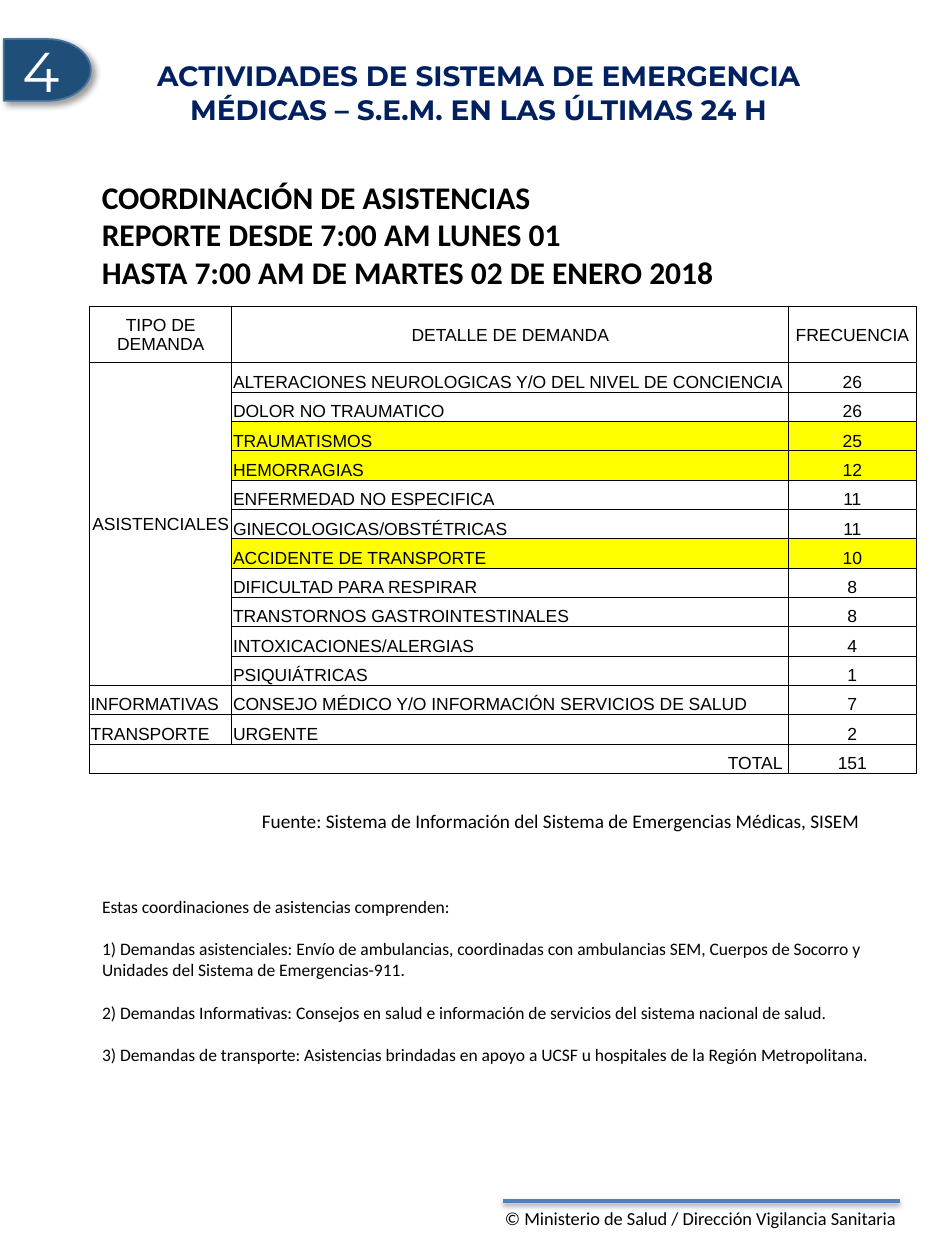
from dataclasses import dataclass, field
from typing import Any

import lxml.etree
import pptx
import pptx.dml.color
import pptx.enum.shapes
import pptx.enum.text
import pptx.oxml
import pptx.oxml.ns
import pptx.util

Inches = pptx.util.Inches
Pt = pptx.util.Pt
Align = pptx.enum.text.PP_ALIGN
Anchor = pptx.enum.text.MSO_ANCHOR
AutoSize = pptx.enum.text.MSO_AUTO_SIZE

BLACK, WHITE, NAVY, YELLOW = "000000", "FFFFFF", "002060", "FFFF00"
DRAWING = pptx.oxml.ns.nsdecls("a")
COLUMN_WIDTHS = (1.13, 4.42, 1.01)
HEADER_HEIGHT, ROW_HEIGHT = 0.45, 0.233
HEADINGS = ("TIPO DE DEMANDA", "DETALLE DE DEMANDA", "FRECUENCIA")


@dataclass
class TextStyle:
    size: float
    font: str = "Calibri"
    color: str = BLACK
    bold: bool = False
    paragraph: dict[str, Any] = field(default_factory=dict)


@dataclass
class TextBlock:
    left: float
    top: float
    width: float
    height: float
    lines: list[str]
    style: TextStyle
    wrap: bool = True


@dataclass
class Demand:
    kind: str
    detail: str
    frequency: int
    highlighted: bool = False


DEMANDS = [
    Demand("ASISTENCIALES", "ALTERACIONES NEUROLOGICAS Y/O DEL NIVEL DE CONCIENCIA", 26),
    Demand("", "DOLOR NO TRAUMATICO", 26),
    Demand("", "TRAUMATISMOS", 25, True),
    Demand("", "HEMORRAGIAS", 12, True),
    Demand("", "ENFERMEDAD NO ESPECIFICA", 11),
    Demand("", "GINECOLOGICAS/OBSTÉTRICAS", 11),
    Demand("", "ACCIDENTE DE TRANSPORTE", 10, True),
    Demand("", "DIFICULTAD PARA RESPIRAR", 8),
    Demand("", "TRANSTORNOS GASTROINTESTINALES", 8),
    Demand("", "INTOXICACIONES/ALERGIAS", 4),
    Demand("", "PSIQUIÁTRICAS", 1),
    Demand("INFORMATIVAS", "CONSEJO MÉDICO Y/O INFORMACIÓN SERVICIOS DE SALUD", 7),
    Demand("TRANSPORTE", "URGENTE", 2),
]

TITLE = TextBlock(
    0.77, 0.48, 6.06, 0.51,
    ["ACTIVIDADES DE SISTEMA DE EMERGENCIA MÉDICAS – S.E.M. EN LAS ÚLTIMAS 24 H"],
    TextStyle(16, "Montserrat", NAVY, True, {"alignment": Align.CENTER}),
)
NOTES = TextBlock(
    0.71, 7.06, 6.44, 1.45,
    [
        "Estas coordinaciones de asistencias comprenden:",
        "1) Demandas asistenciales: Envío de ambulancias, coordinadas con ambulancias SEM, "
        "Cuerpos de Socorro y Unidades del Sistema de Emergencias-911.",
        "2) Demandas Informativas: Consejos en salud e información de servicios del sistema "
        "nacional de salud.",
        "3) Demandas de transporte: Asistencias brindadas en apoyo a UCSF u hospitales de la "
        "Región Metropolitana.",
    ],
    TextStyle(10, paragraph={"space_before": Pt(0), "space_after": Pt(12.2)}),
)
TEXT_BOXES = [
    TextBlock(
        3.91, 9.53, 3.36, 0.45,
        ["© Ministerio de Salud / Dirección Vigilancia Sanitaria"], TextStyle(10.5), False,
    ),
    TextBlock(
        1.98, 6.37, 4.98, 0.29,
        ["Fuente: Sistema de Información del Sistema de Emergencias Médicas, SISEM"],
        TextStyle(11), False,
    ),
    TextBlock(
        0.71, 1.36, 6.56, 1.31,
        [
            "COORDINACIÓN DE ASISTENCIAS",
            "REPORTE DESDE 7:00 AM LUNES 01",
            "HASTA 7:00 AM DE MARTES 02 DE ENERO 2018",
        ],
        TextStyle(18, bold=True),
    ),
]


def rgb(value: str) -> pptx.dml.color.RGBColor:
    return pptx.dml.color.RGBColor.from_string(value)


def apply_format(target: Any, values: dict[str, Any]) -> None:
    for name, value in values.items():
        setattr(target, name, value)


def write_lines(frame: Any, lines: list[str], style: TextStyle) -> None:
    for index, line in enumerate(lines):
        para = frame.add_paragraph() if index else frame.paragraphs[0]
        apply_format(para, style.paragraph)
        span = para.add_run()
        span.text = line
        apply_format(span.font, {"size": Pt(style.size), "name": style.font, "bold": style.bold})
        span.font.color.rgb = rgb(style.color)


def add_shadow(shape: Any, opacity: int, blur: float, distance: float, angle: int) -> None:
    shape._element.spPr.append(pptx.oxml.parse_xml(
        f'<a:effectLst {DRAWING}><a:outerShdw blurRad="{Pt(blur)}" dist="{Pt(distance)}" '
        f'dir="{angle * 60000}" algn="t" rotWithShape="0"><a:srgbClr val="{BLACK}">'
        f'<a:alpha val="{opacity * 1000}"/></a:srgbClr></a:outerShdw></a:effectLst>'))


def fill_placeholder(box: Any, block: TextBlock, anchor: Any) -> None:
    for name in ("left", "top", "width", "height"):
        setattr(box, name, Inches(getattr(block, name)))
    apply_format(box.text_frame, {
        "word_wrap": True, "auto_size": AutoSize.NONE, "vertical_anchor": anchor})
    write_lines(box.text_frame, block.lines, block.style)


def remove_bullets(frame: Any) -> None:
    for para in frame.paragraphs:
        properties = para._p.get_or_add_pPr()
        properties.set("marL", "0")
        properties.set("indent", "0")
        lxml.etree.SubElement(properties, pptx.oxml.ns.qn("a:buNone"))


def add_text_box(page: Any, block: TextBlock) -> None:
    box = page.shapes.add_textbox(
        Inches(block.left), Inches(block.top), Inches(block.width), Inches(block.height))
    apply_format(box.text_frame, {
        "word_wrap": block.wrap, "auto_size": AutoSize.SHAPE_TO_FIT_TEXT})
    write_lines(box.text_frame, block.lines, block.style)


def add_footer_line(page: Any) -> None:
    line = page.shapes.add_connector(
        pptx.enum.shapes.MSO_CONNECTOR.STRAIGHT,
        Inches(3.99), Inches(9.53), Inches(7.14), Inches(9.53))
    line.line.color.rgb = rgb("4F81BD")
    line.line.width = Pt(2)
    add_shadow(line, 38, 3.1, 1.6, 90)


def add_section_number(page: Any) -> None:
    badge = page.shapes.add_shape(
        pptx.enum.shapes.MSO_SHAPE.FLOWCHART_DELAY,
        Inches(0.03), Inches(0.31), Inches(0.69), Inches(0.49))
    badge.fill.solid()
    badge.fill.fore_color.rgb = rgb("1F4E79")
    badge.line.color.rgb = rgb("43739E")
    badge.line.width = Pt(1)
    add_shadow(badge, 40, 4, 3, 45)
    badge.text_frame.vertical_anchor = Anchor.MIDDLE
    write_lines(badge.text_frame, ["4"], TextStyle(
        32, "Montserrat", WHITE, paragraph={"alignment": Align.CENTER}))


def format_cell(cell: Any, text: str, align: Any, anchor: Any, highlighted: bool) -> None:
    properties = cell._tc.get_or_add_tcPr()
    for side in "LRTB":
        properties.append(pptx.oxml.parse_xml(
            f'<a:ln{side} {DRAWING} w="{Pt(0.5)}"><a:solidFill><a:srgbClr val="{BLACK}"/>'
            f'</a:solidFill></a:ln{side}>'))
    if highlighted:
        cell.fill.solid()
        cell.fill.fore_color.rgb = rgb(YELLOW)
    else:
        cell.fill.background()
    apply_format(cell, {
        "margin_left": Inches(0.01), "margin_top": Inches(0.01), "margin_bottom": 0,
        "margin_right": Inches(0.05 if align == Align.RIGHT else 0.01),
        "vertical_anchor": anchor})
    if text:
        write_lines(cell.text_frame, [text], TextStyle(
            10, "Arial", paragraph={"alignment": align}))


def add_demand_table(page: Any) -> None:
    total_row = len(DEMANDS) + 1
    table = page.shapes.add_table(
        total_row + 1, len(HEADINGS), Inches(0.71), Inches(2.43), Inches(sum(COLUMN_WIDTHS)),
        Inches(HEADER_HEIGHT + total_row * ROW_HEIGHT)).table
    apply_format(table, {"first_row": False, "horz_banding": False})
    for column, width in zip(table.columns, COLUMN_WIDTHS):
        column.width = Inches(width)
    for index, row in enumerate(table.rows):
        row.height = Inches(ROW_HEIGHT if index else HEADER_HEIGHT)

    for column, heading in enumerate(HEADINGS):
        format_cell(table.cell(0, column), heading, Align.CENTER, Anchor.MIDDLE, False)
    group_size = 1 + sum(not demand.kind for demand in DEMANDS)
    for row, demand in enumerate(DEMANDS, 1):
        grouped = row <= group_size
        format_cell(table.cell(row, 0), demand.kind, Align.CENTER if grouped else Align.LEFT,
                    Anchor.MIDDLE if grouped else Anchor.BOTTOM, False)
        format_cell(table.cell(row, 1), demand.detail, Align.LEFT, Anchor.BOTTOM,
                    demand.highlighted)
        format_cell(table.cell(row, 2), str(demand.frequency), Align.CENTER, Anchor.BOTTOM,
                    demand.highlighted)
    total = str(sum(demand.frequency for demand in DEMANDS))
    for column, (text, align) in enumerate(
            [("TOTAL", Align.RIGHT), ("", Align.RIGHT), (total, Align.CENTER)]):
        format_cell(table.cell(total_row, column), text, align, Anchor.BOTTOM, False)
    table.cell(1, 0).merge(table.cell(group_size, 0))
    table.cell(total_row, 0).merge(table.cell(total_row, 1))


def main() -> None:
    deck = pptx.Presentation()
    deck.slide_width, deck.slide_height = Inches(7.5), Inches(10)
    page = deck.slides.add_slide(deck.slide_layouts[1])
    fill_placeholder(page.shapes.title, TITLE, Anchor.MIDDLE)
    notes = page.placeholders[1]
    fill_placeholder(notes, NOTES, Anchor.TOP)
    remove_bullets(notes.text_frame)
    add_footer_line(page)
    add_section_number(page)
    add_demand_table(page)
    for block in TEXT_BOXES:
        add_text_box(page, block)
    deck.save("out.pptx")


if __name__ == "__main__":
    main()
